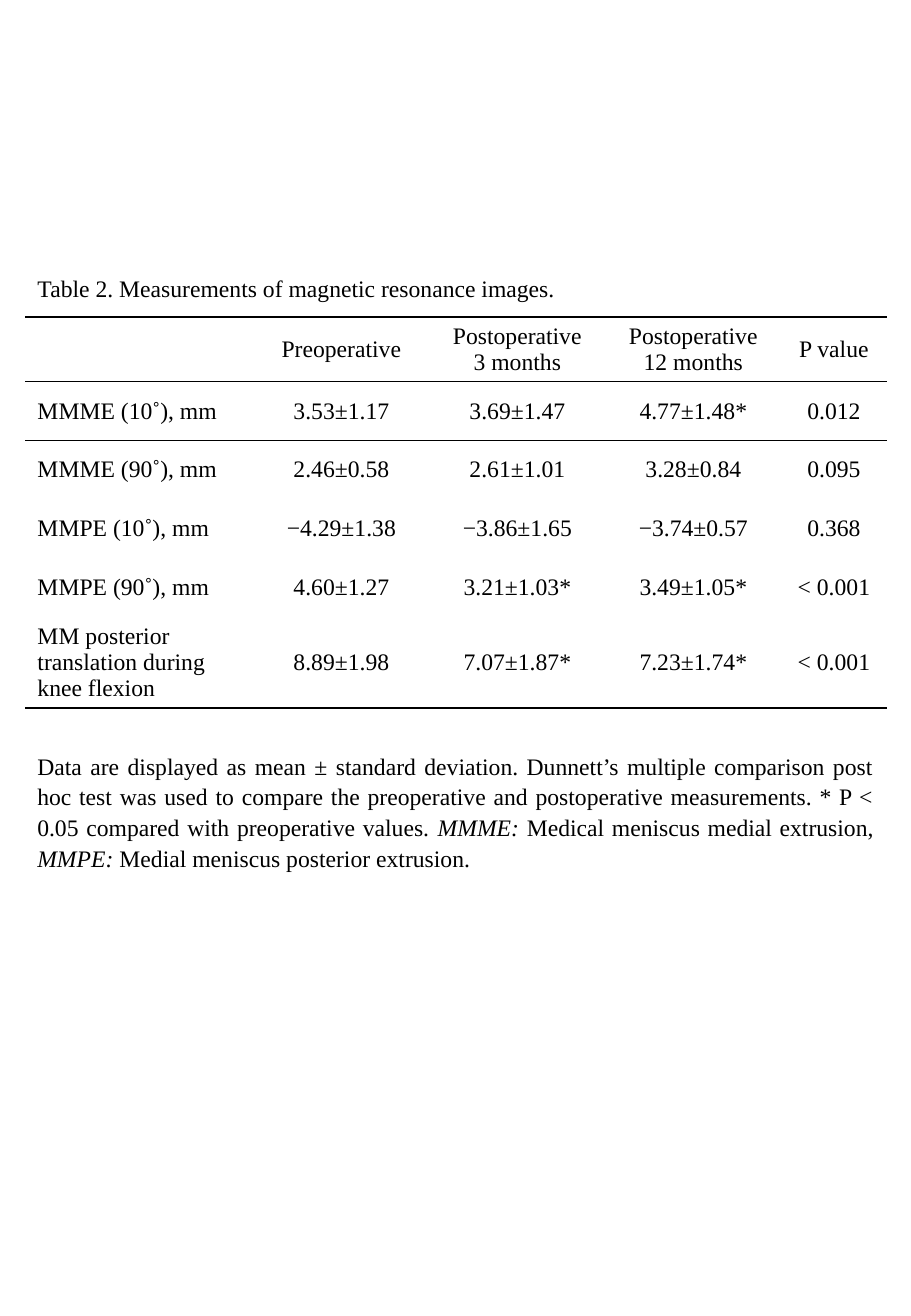
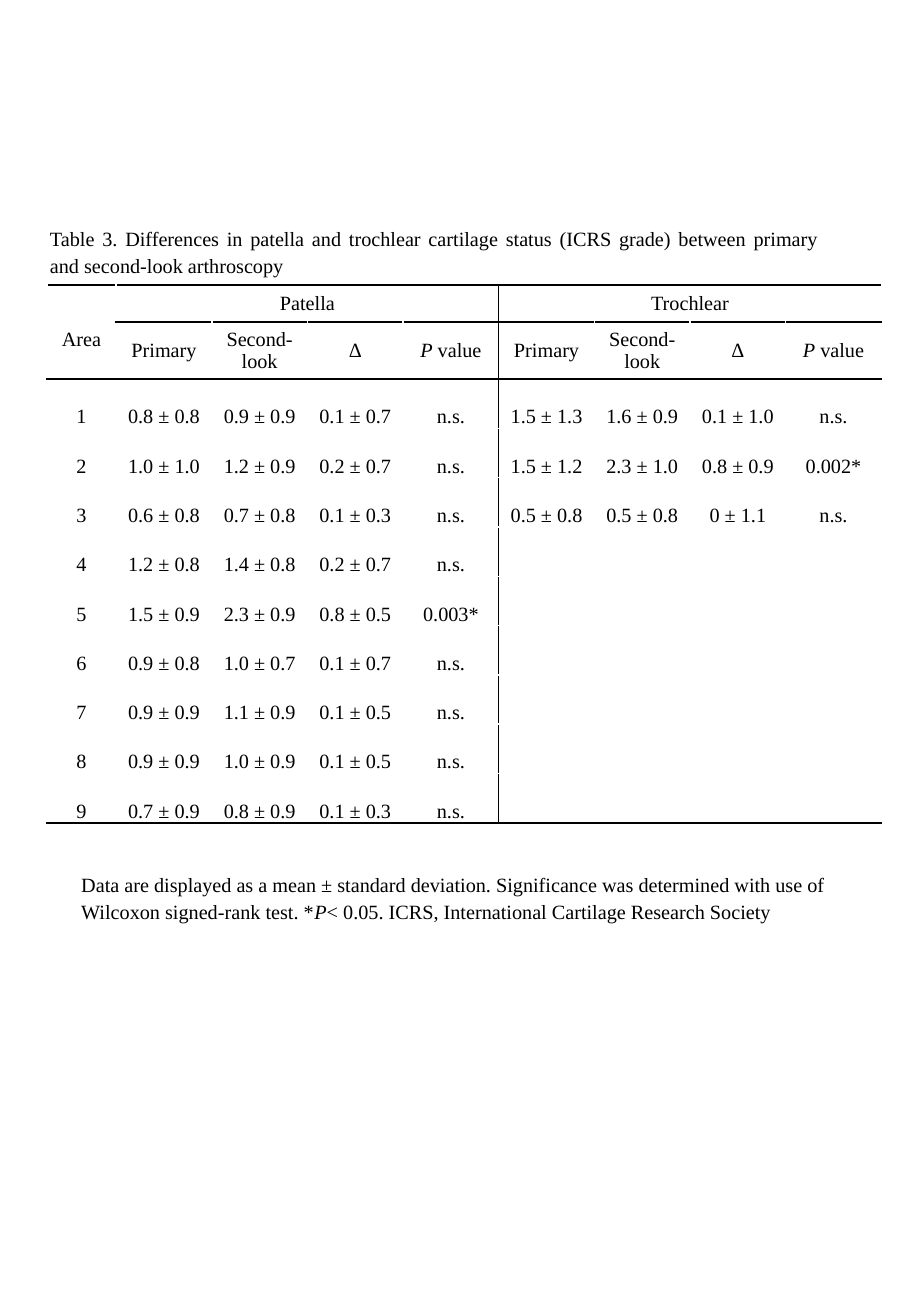
import pptx
import pptx.dml.color
import pptx.enum.text
import pptx.oxml
import pptx.oxml.ns
import pptx.util

Cm = pptx.util.Cm
ALIGN = pptx.enum.text.PP_ALIGN
ANCHOR = pptx.enum.text.MSO_ANCHOR

COLORS = {"ink": "000000", "paper": "FFFFFF"}
FONT = "Times New Roman"
PLAIN_TABLE_STYLE = "{2D5ABB26-0587-4C30-8999-92F81FD0307C}"
CAPTION_SPACING = 1.08

# Table contents; underscores enclose italic words
mri_rows = [
    ["", "Preoperative", "Postoperative\n3 months", "Postoperative\n12 months", "P value"],
    ["MMME (10˚), mm", "3.53±1.17", "3.69±1.47", "4.77±1.48*", "0.012"],
    ["MMME (90˚), mm", "2.46±0.58", "2.61±1.01", "3.28±0.84", "0.095"],
    ["MMPE (10˚), mm", "−4.29±1.38", "−3.86±1.65", "−3.74±0.57", "0.368"],
    ["MMPE (90˚), mm", "4.60±1.27", "3.21±1.03*", "3.49±1.05*", "< 0.001"],
    ["MM posterior translation during knee flexion", "8.89±1.98", "7.07±1.87*",
     "7.23±1.74*", "< 0.001"],
]
measures = ["Primary", "Second-look", "Δ", "_P_ value"]
patella = [
    ["0.8 ± 0.8", "0.9 ± 0.9", "0.1 ± 0.7", "n.s."],
    ["1.0 ± 1.0", "1.2 ± 0.9", "0.2 ± 0.7", "n.s."],
    ["0.6 ± 0.8", "0.7 ± 0.8", "0.1 ± 0.3", "n.s."],
    ["1.2 ± 0.8", "1.4 ± 0.8", "0.2 ± 0.7", "n.s."],
    ["1.5 ± 0.9", "2.3 ± 0.9", "0.8 ± 0.5", "0.003*"],
    ["0.9 ± 0.8", "1.0 ± 0.7", "0.1 ± 0.7", "n.s."],
    ["0.9 ± 0.9", "1.1 ± 0.9", "0.1 ± 0.5", "n.s."],
    ["0.9 ± 0.9", "1.0 ± 0.9", "0.1 ± 0.5", "n.s."],
    ["0.7 ± 0.9", "0.8 ± 0.9", "0.1 ± 0.3", "n.s."],
]
trochlear = [
    ["1.5 ± 1.3", "1.6 ± 0.9", "0.1 ± 1.0", "n.s."],
    ["1.5 ± 1.2", "2.3 ± 1.0", "0.8 ± 0.9", "0.002*"],
    ["0.5 ± 0.8", "0.5 ± 0.8", "0 ± 1.1", "n.s."],
]
trochlear += [[""] * 4] * (len(patella) - len(trochlear))
cartilage_rows = [
    ["", "Patella", "", "", "", "Trochlear", "", "", ""],
    ["Area"] + measures * 2,
]
for area, (left, right) in enumerate(zip(patella, trochlear), 1):
    cartilage_rows.append([str(area)] + left + right)

# Caption, table and note of each slide; boxes are left, top, width, height in cm
pages = [
    {
        "size": 14,
        "caption": "Table 2. Measurements of magnetic resonance images.",
        "caption_box": (0.53, 5.56, 17.6, 0.86), "caption_align": ALIGN.LEFT,
        "rows": mri_rows, "table_at": (0.53, 6.63),
        "widths": [4.77] + [3.68] * 3 + [2.2],
        "heights": [1.34] + [1.23] * 4 + [1.9],
        "note": "Data are displayed as mean ± standard deviation. Dunnett’s multiple "
                "comparison post hoc test was used to compare the preoperative and "
                "postoperative measurements. * P < 0.05 compared with preoperative values. "
                "_MMME: _Medical meniscus medial extrusion, "
                "_MMPE: _Medial meniscus posterior extrusion.",
        "note_box": (0.53, 15.54, 18, 2.64), "note_align": ALIGN.JUSTIFY,
    },
    {
        "size": 12,
        "caption": "Table 3. Differences in patella and trochlear cartilage status "
                   "(ICRS grade) between primary and second-look arthroscopy",
        "caption_box": (0.79, 4.57, 16.6, 1.27), "caption_align": ALIGN.JUSTIFY,
        "rows": cartilage_rows, "table_at": (0.98, 5.96),
        "widths": [1.45] + [2] * 8,
        "heights": [0.73, 1.17] + [1.03] * 9,
        "note": "Data are displayed as a mean ± standard deviation. Significance was "
                "determined with use of Wilcoxon signed-rank test. *_P_< 0.05. ICRS, "
                "International Cartilage Research Society",
        "note_box": (1.45, 18.08, 17.6, 1.27), "note_align": ALIGN.LEFT,
    },
]


def write_text(frame, text, size, alignment, spacing=1.0):
    for number, line in enumerate(text.split("\n")):
        paragraph = frame.add_paragraph() if number else frame.paragraphs[0]
        paragraph.alignment = alignment
        paragraph.line_spacing = spacing
        if not line:
            paragraph._p.get_or_add_endParaRPr().set("sz", str(size * 100))
            continue
        for part, words in enumerate(line.split("_")):
            if words:
                run = paragraph.add_run()
                run.text = words
                values = {"name": FONT, "size": pptx.util.Pt(size), "italic": part % 2 == 1}
                for name, value in values.items():
                    setattr(run.font, name, value)
                run.font.color.rgb = pptx.dml.color.RGBColor.from_string(COLORS["ink"])


def draw_borders(cell, borders):
    """Borders map a side (L, R, T, B) to a colour name and a width in points."""
    properties = cell._tc.get_or_add_tcPr()
    sides = [side for side in "LRTB" if side in borders]
    for position, side in enumerate(sides):
        color, width = borders[side]
        line = pptx.oxml.parse_xml(
            f'<a:ln{side} {pptx.oxml.ns.nsdecls("a")} w="{pptx.util.Pt(width)}">'
            f'<a:solidFill><a:srgbClr val="{COLORS[color]}"/></a:solidFill></a:ln{side}>')
        properties.insert(position, line)


presentation = pptx.Presentation()
presentation.slide_width = Cm(19.05)
presentation.slide_height = Cm(27.51)
title_only = presentation.slide_layouts[5]
tables = []

for page in pages:
    slide = presentation.slides.add_slide(title_only)

    # Caption above and note below
    note = slide.shapes.add_textbox(0, 0, 0, 0)
    for shape, key in [(slide.shapes.title, "caption"), (note, "note")]:
        left, top, width, height = map(Cm, page[key + "_box"])
        box = {"left": left, "top": top, "width": width, "height": height}
        for name, value in box.items():
            setattr(shape, name, value)
        frame_format = {"word_wrap": True, "vertical_anchor": ANCHOR.TOP,
                        "auto_size": pptx.enum.text.MSO_AUTO_SIZE.NONE}
        for name, value in frame_format.items():
            setattr(shape.text_frame, name, value)
        write_text(shape.text_frame, page[key], page["size"], page[key + "_align"],
                   CAPTION_SPACING)

    # Plain table frame
    rows, widths, heights = page["rows"], page["widths"], page["heights"]
    left, top = page["table_at"]
    graphic = slide.shapes.add_table(len(rows), len(widths), Cm(left), Cm(top),
                                     Cm(sum(widths)), Cm(sum(heights)))
    table = graphic.table
    table.first_row = table.horz_banding = False
    table._tbl.tblPr.find(pptx.oxml.ns.qn("a:tableStyleId")).text = PLAIN_TABLE_STYLE
    for column, width in zip(table.columns, widths):
        column.width = Cm(width)
    for row, height in zip(table.rows, heights):
        row.height = Cm(height)
    for cell in table.iter_cells():
        cell.fill.background()
        cell.vertical_anchor = ANCHOR.MIDDLE
    tables.append(table)

mri_table, cartilage_table = tables

# Table 2: rules around the header and at the bottom
for r, texts in enumerate(mri_rows):
    for c, text in enumerate(texts):
        cell = mri_table.cell(r, c)
        write_text(cell.text_frame, text, 14, ALIGN.CENTER if c else ALIGN.LEFT)
        borders = {}
        if r <= 1:
            borders["T"] = ("ink", 1)
        if r in (0, len(mri_rows) - 1):
            borders["B"] = ("ink", 1)
        draw_borders(cell, borders)

# Table 3: two merged group headings, a divider between the groups
for first in (1, 5):
    cartilage_table.cell(0, first).merge(cartilage_table.cell(0, first + 3))
blank = ("paper", 1)
group_rules = {0: ("ink", 1.5), 1: ("ink", 1.5), 2: ("ink", 1),
               len(cartilage_rows): ("ink", 1.5)}
area_rules = {**group_rules, 0: ("ink", 1), 1: blank}
for r, texts in enumerate(cartilage_rows):
    for c, text in enumerate(texts):
        cell = cartilage_table.cell(r, c)
        if r >= 2:
            cell.vertical_anchor = ANCHOR.BOTTOM
            for side in ("left", "right", "top", "bottom"):
                setattr(cell, "margin_" + side, 0)
        elif c == 0:
            cell.vertical_anchor = ANCHOR.TOP
        spacing = 2.0 if r >= 2 and text else 1.0
        if not cell.is_spanned:
            write_text(cell.text_frame, text, 12, ALIGN.CENTER, spacing)
        rules = group_rules if c else area_rules
        before_divider = c == 4 or (r, c) == (0, 1)
        draw_borders(cell, {
            "L": ("ink", 1) if c == 5 else blank,
            "R": ("ink", 1) if before_divider else blank,
            "T": rules.get(r, blank),
            "B": rules.get(r + 1, blank),
        })

presentation.save("out.pptx")
